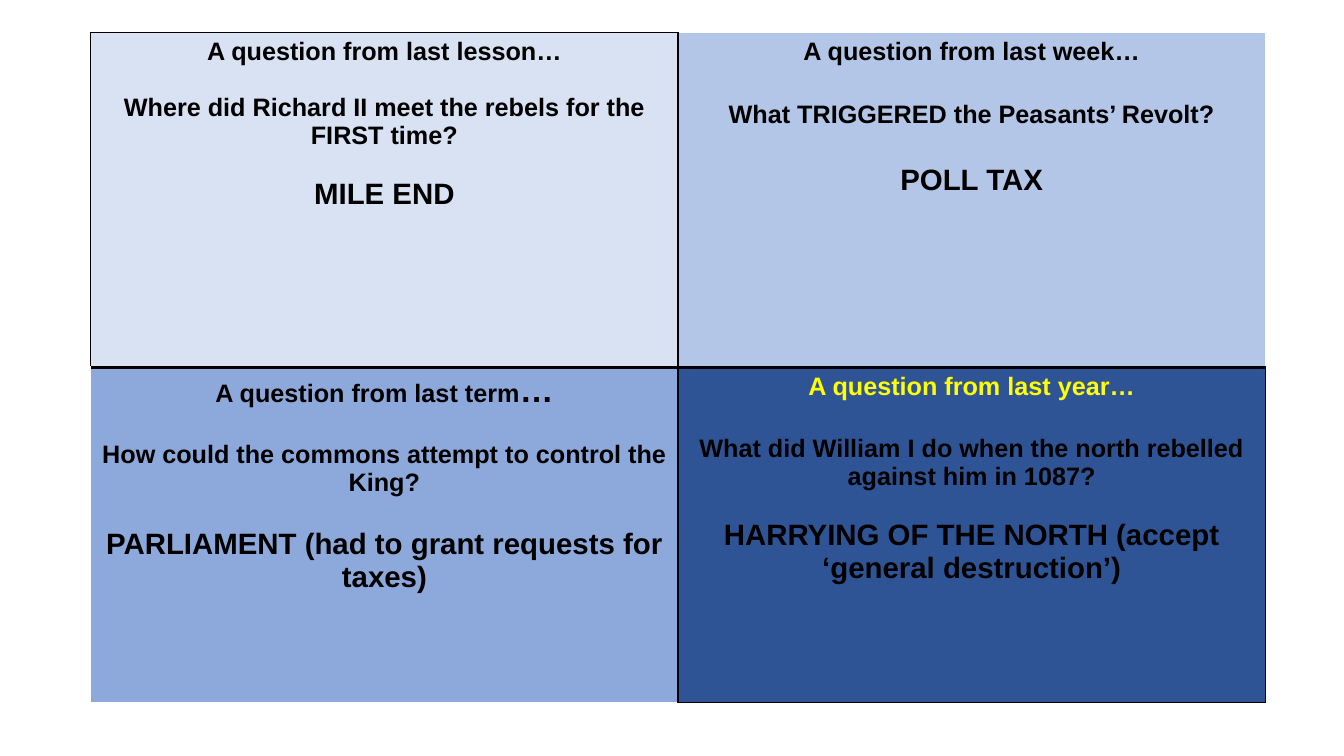
from dataclasses import dataclass

from lxml.etree import SubElement as Sub
from pptx import Presentation
from pptx.dml.color import RGBColor as Rgb
from pptx.enum.text import MSO_ANCHOR as Anchor, PP_ALIGN as Align
from pptx.oxml.ns import qn
from pptx.table import _Cell as Cell
from pptx.util import Inches, Pt

BLACK, WHITE, YELLOW = "000000", "FFFFFF", "FFFF00"


@dataclass
class Edge:
    side: str
    color: str = BLACK
    width: float = 1


@dataclass
class Quiz:
    title: str
    ask: str
    answer: str
    fill: str
    edges: list[Edge]
    gaps: tuple[float, float]
    color: str = BLACK
    dots: float = 18


QUIZZES = [
    Quiz("A question from last lesson",
         "Where did Richard II meet the rebels for the FIRST time?",
         "MILE END", "D8E2F3",
         [Edge("L"), Edge("R"), Edge("T"), Edge("B", width=3)], (20, 20)),
    Quiz("A question from last week",
         "What TRIGGERED the Peasants’ Revolt?",
         "POLL TAX", "B3C6E7",
         [Edge("L"), Edge("R", WHITE), Edge("T", WHITE), Edge("B", width=3)],
         (25, 25)),
    Quiz("A question from last term",
         "How could the commons attempt to control the King?",
         "PARLIAMENT (had to grant requests for taxes)", "8DA9DB",
         [Edge("L", WHITE), Edge("R"), Edge("T", width=3), Edge("B", WHITE)],
         (22, 22), dots=24),
    Quiz("A question from last year",
         "What did William I do when the north rebelled against him in 1087?",
         "HARRYING OF THE NORTH (accept ‘general destruction’)", "2F5496",
         [Edge("L"), Edge("R"), Edge("T", width=3), Edge("B")],
         (24, 20), color=YELLOW),
]


def paint(target, color: str) -> None:
    target.solid()
    target.fore_color.rgb = Rgb.from_string(color)


def write(para, text: str, *, size: float = 18, color: str = BLACK,
          gap: float = 0) -> None:
    """Add a bold centred run, with a gap in points above its paragraph."""
    para.alignment = Align.CENTER
    para.space_before = Pt(gap)
    run = para.add_run()
    run.text = text
    font = run.font
    font.name, font.size, font.bold = "Arial", Pt(size), True
    paint(font.fill, color)


def border(cell: Cell, edges: list[Edge]) -> None:
    props = cell._tc.get_or_add_tcPr()
    for place, edge in enumerate(edges):
        line = Sub(props, qn(f"a:ln{edge.side}"), w=str(Pt(edge.width)))
        Sub(Sub(line, qn("a:solidFill")), qn("a:srgbClr"), val=edge.color)
        props.insert(place, line)  # borders come before the fill


def draw(cell: Cell, quiz: Quiz) -> None:
    paint(cell.fill, quiz.fill)
    border(cell, quiz.edges)
    cell.vertical_anchor = Anchor.TOP
    frame = cell.text_frame
    head = frame.paragraphs[0]
    write(head, quiz.title, color=quiz.color)
    write(head, "…", size=quiz.dots, color=quiz.color)
    before, after = quiz.gaps
    write(frame.add_paragraph(), quiz.ask, gap=before)
    write(frame.add_paragraph(), quiz.answer, size=21, gap=after)


def main() -> None:
    deck = Presentation()
    deck.slide_width, deck.slide_height = Inches(13.33), Inches(7.5)
    slide = deck.slides.add_slide(deck.slide_layouts[6])
    table = slide.shapes.add_table(
        2, 2, Inches(0.9), Inches(0.32), Inches(11.65), Inches(6.65)).table
    table.first_row = table.horz_banding = False
    for cell, quiz in zip(table.iter_cells(), QUIZZES):
        draw(cell, quiz)
    deck.save("out.pptx")


if __name__ == "__main__":
    main()
